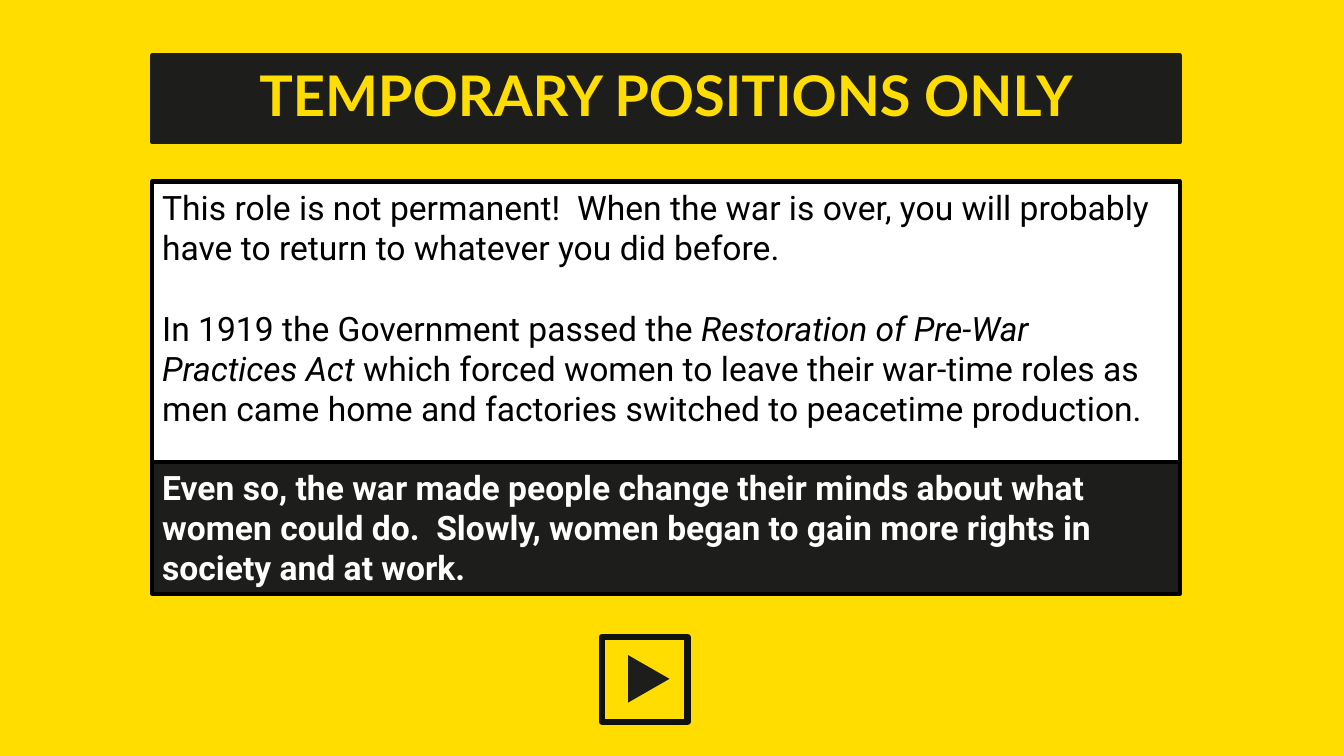
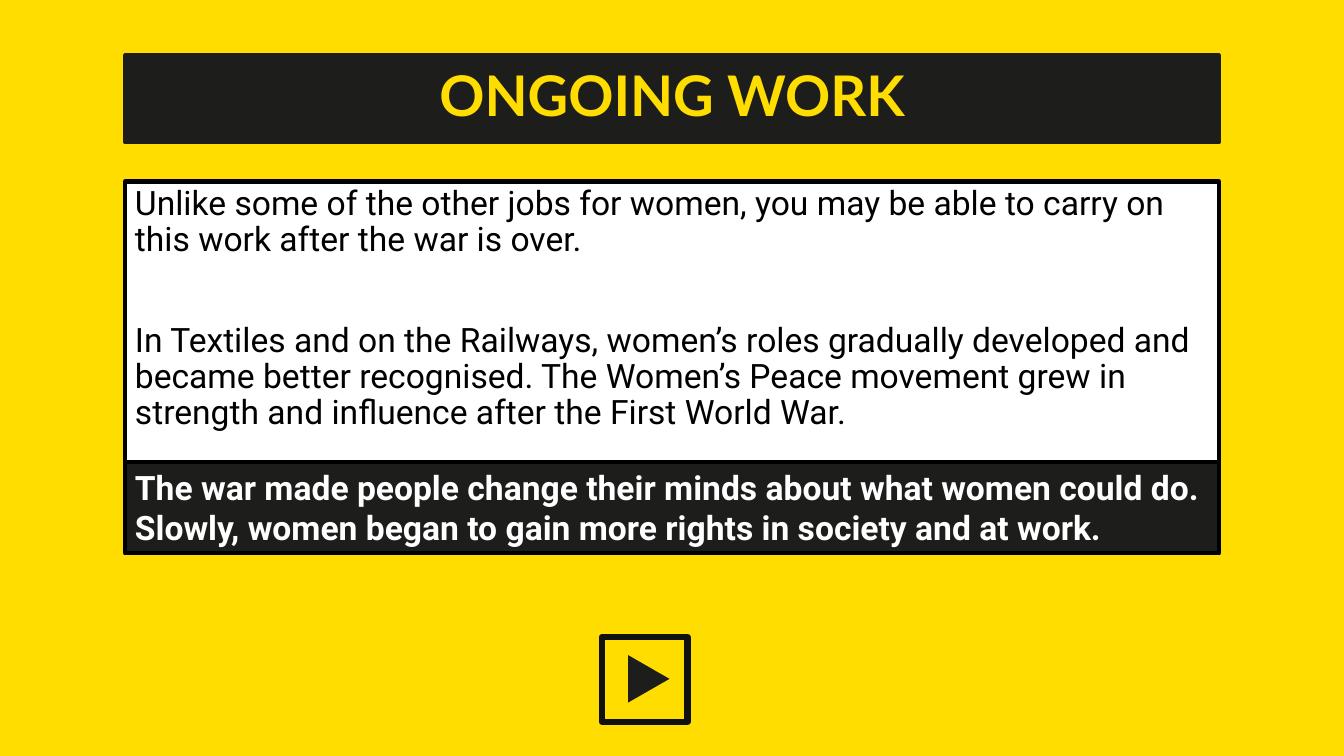
from pptx import Presentation
from pptx.dml.color import RGBColor
from pptx.enum.shapes import MSO_SHAPE
from pptx.enum.text import MSO_ANCHOR, PP_ALIGN
from pptx.util import Inches, Pt

RECT = MSO_SHAPE.RECTANGLE
TRIANGLE = MSO_SHAPE.ISOSCELES_TRIANGLE
TOP, MIDDLE = MSO_ANCHOR.TOP, MSO_ANCHOR.MIDDLE
LEFT, CENTER = PP_ALIGN.LEFT, PP_ALIGN.CENTER

COLORS = {
    "yellow": "FFDD00",
    "dark": "1D1D1B",
    "frame": "111110",
    "black": "000000",
    "white": "FFFFFF",
}
WIDTH, HEIGHT = 13.33, 7.5

SLIDES = [
    {
        "title": "TEMPORARY POSITIONS ONLY",
        "left": 1.51,
        "width": 10.19,
        "body": [
            [("This role is not permanent!  When the war is over, you will "
              "probably have to return to whatever you did before.", False)],
            [("In 1919 the Government passed the", False),
             (" Restoration of Pre-War Practices Act ", True),
             ("which forced women to leave their war-time roles as men came "
              "home and factories switched to peacetime production.", False)],
        ],
        "spacing": 1.0,
        "gap": 29,
        "closing": "Even so, the war made people change their minds about what "
                   "women could do.  Slowly, women began to gain more rights in "
                   "society and at work.",
        "depth": 1.31,
    },
    {
        "title": "ONGOING WORK",
        "left": 1.24,
        "width": 10.85,
        "body": [
            [("Unlike some of the other jobs for women, you may be able to "
              "carry on this work after the war is over.", False)],
            [("In Textiles and on the Railways, women’s roles gradually "
              "developed and became better recognised. The Women’s Peace "
              "movement grew in strength and influence after the First World "
              "War.", False)],
        ],
        "spacing": 0.9,
        "gap": 46,
        "closing": "The war made people change their minds about what women "
                   "could do. Slowly, women began to gain more rights in "
                   "society and at work.",
        "depth": 0.91,
    },
]


def color(name):
    return RGBColor.from_string(COLORS[name])


def add_box(shapes, kind, place, fill, line=None, weight=3):
    box = shapes.add_shape(kind, *map(Inches, place))
    box.shadow.inherit = False
    box.fill.solid()
    box.fill.fore_color.rgb = color(fill)
    if line:
        box.line.color.rgb = color(line)
        box.line.width = Pt(weight)
    else:
        box.line.fill.background()
    return box


def write(box, paras, ink, font="Roboto", size=24, bold=False,
          align=LEFT, anchor=TOP, spacing=1.0, gap=0):
    frame = box.text_frame
    frame.word_wrap = True
    frame.vertical_anchor = anchor
    for index, runs in enumerate(paras):
        para = frame.add_paragraph() if index else frame.paragraphs[0]
        para.alignment = align
        para.line_spacing = spacing
        para.space_before = Pt(gap if index else 0)
        for text, italic in runs:
            run = para.add_run()
            run.text = text
            run.font.name = font
            run.font.size = Pt(size)
            run.font.bold = bold
            run.font.italic = italic
            run.font.color.rgb = color(ink)


def add_title(slide, left, width, text):
    box = add_box(slide.shapes, RECT, (left, 0.55, width, 0.86), "dark", "dark")
    write(box, [[(text, False)]], "yellow", "Lato", 40, True,
          CENTER, MIDDLE, 0.9)


def add_body(slide, left, width, paras, spacing, gap):
    box = add_box(slide.shapes, RECT, (left, 1.8, width, 3.55), "white", "black")
    write(box, paras, "black", spacing=spacing, gap=gap)


def add_closing(slide, left, width, depth, text):
    box = add_box(slide.shapes, RECT, (left, 4.58, width, depth), "dark", "black")
    write(box, [[(text, False)]], "white", bold=True)


def add_button(slide):
    group = slide.shapes.add_group_shape()
    add_box(group.shapes, RECT, (5.97, 6.32, 0.85, 0.84), "yellow", "frame", 4.5)
    arrow = add_box(group.shapes, TRIANGLE, (6.2, 6.53, 0.47, 0.41), "dark")
    arrow.rotation = 90


def add_page(deck, page):
    slide = deck.slides.add_slide(deck.slide_layouts[6])
    left, width = page["left"], page["width"]
    add_body(slide, left, width, page["body"], page["spacing"], page["gap"])
    add_title(slide, left, width, page["title"])
    add_closing(slide, left, width, page["depth"], page["closing"])
    add_button(slide)


def main():
    deck = Presentation()
    deck.slide_width, deck.slide_height = Inches(WIDTH), Inches(HEIGHT)
    ground = deck.slide_master.background.fill
    ground.solid()
    ground.fore_color.rgb = color("yellow")
    for page in SLIDES:
        add_page(deck, page)
    deck.save("out.pptx")


if __name__ == "__main__":
    main()
